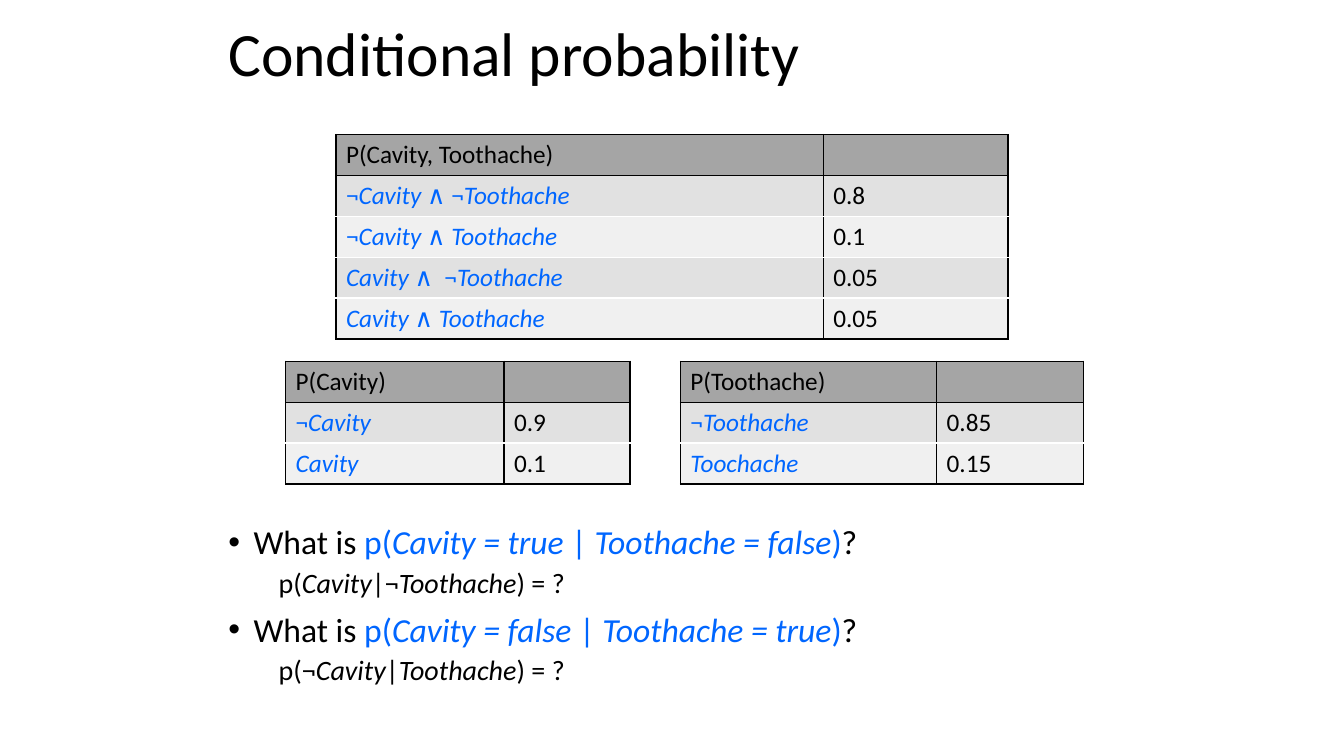
from lxml import etree
from pptx import Presentation
from pptx import util as u
from pptx.dml.color import RGBColor
from pptx.enum import text
from pptx.oxml import ns

PX = 9525  # EMU per px, on a slide of 1280 x 720 px


class Theme:
    font = "Calibri"
    ink, blue, white = "000000", "0066FF", "FFFFFF"
    header, bands = "A5A5A5", ("E1E1E1", "F0F0F0")
    title, question, answer, cell = 44, 24, 20, 18
    row_height = 39


def px(n):
    return u.Emu(n * PX)


def set_all(obj, values):
    for name, value in values.items():
        setattr(obj, name, value)


def add_runs(p, parts, size):
    """Write (text, colour) parts; asterisks enclose italics."""
    for markup, colour in parts:
        for i, piece in enumerate(markup.split("*")):
            if piece:
                r = p.add_run()
                r.text = piece
                set_all(r.font, {"name": Theme.font, "size": u.Pt(size),
                                 "italic": i % 2 == 1})
                r.font.color.rgb = RGBColor.from_string(colour)


def add_text(s, box, anchor):
    tf = s.shapes.add_textbox(*map(px, box)).text_frame
    set_all(tf, {"word_wrap": True, "vertical_anchor": anchor})
    return tf


def add_title(s, words):
    tf = add_text(s, (208, 8, 864, 91), text.MSO_ANCHOR.MIDDLE)
    p = tf.paragraphs[0]
    p.line_spacing = 0.9
    add_runs(p, [(words, Theme.ink)], Theme.title)


def add_line(tf, parts, size, before, margin, bullet=None):
    first = not tf.paragraphs[0].runs
    p = tf.paragraphs[0] if first else tf.add_paragraph()
    set_all(p, {"line_spacing": 0.9, "space_before": u.Pt(0 if first else before)})
    pPr = p._p.get_or_add_pPr()
    pPr.set("marL", str(px(margin)))
    pPr.set("indent", str(px(-24)))
    if bullet:
        etree.SubElement(pPr, ns.qn("a:buFont"), typeface="Arial")
        etree.SubElement(pPr, ns.qn("a:buChar"), char=bullet)
    else:
        etree.SubElement(pPr, ns.qn("a:buNone"))
    add_runs(p, parts, size)


def add_questions(s, questions):
    tf = add_text(s, (208, 496, 966, 202), text.MSO_ANCHOR.TOP)
    for query, answer in questions:
        parts = [("What is ", Theme.ink), (query, Theme.blue), ("?", Theme.ink)]
        add_line(tf, parts, Theme.question, 10, 24, "•")
        add_line(tf, [(answer, Theme.ink)], Theme.answer, 5, 72)


def set_borders(cell, top, bottom):
    tcPr = cell._tc.get_or_add_tcPr()
    sides = {"L": Theme.ink, "R": Theme.ink, "T": top, "B": bottom}
    for side, colour in sides.items():
        ln = etree.SubElement(tcPr, ns.qn(f"a:ln{side}"), w=str(u.Pt(1)))
        fill = etree.SubElement(ln, ns.qn("a:solidFill"))
        etree.SubElement(fill, ns.qn("a:srgbClr"), val=colour)


def add_probabilities(s, left, top, widths, heading, entries):
    rows = [(heading, "")] + entries
    sp = s.shapes.add_table(len(rows), 2, px(left), px(top), px(sum(widths)),
                            px(Theme.row_height * len(rows)))
    table = sp.table
    for column, width in zip(table.columns, widths):
        column.width = px(width)
    for i, row in enumerate(rows):
        table.rows[i].height = px(Theme.row_height)
        fill = Theme.bands[(i - 1) % 2] if i else Theme.header
        # White rules between entries, black around them and the header
        upper = Theme.white if i > 1 else Theme.ink
        lower = Theme.white if 0 < i < len(rows) - 1 else Theme.ink
        for j, words in enumerate(row):
            cell = table.cell(i, j)
            set_borders(cell, upper, lower)
            cell.fill.solid()
            cell.fill.fore_color.rgb = RGBColor.from_string(fill)
            colour = Theme.blue if i and j == 0 else Theme.ink
            add_runs(cell.text_frame.paragraphs[0], [(words, colour)], Theme.cell)


def main():
    prs = Presentation()
    set_all(prs, {"slide_width": px(1280), "slide_height": px(720)})
    s = prs.slides.add_slide(prs.slide_layouts[6])

    add_title(s, "Conditional probability")

    # Joint distribution
    add_probabilities(s, 320, 128, (464, 176), "P(Cavity, Toothache)", [
        ("¬*Cavity *∧ ¬*Toothache*", "0.8"),
        ("¬*Cavity *∧* Toothache*", "0.1"),
        ("*Cavity *∧  ¬*Toothache*", "0.05"),
        ("*Cavity *∧* Toothache*", "0.05"),
    ])

    # Marginal distributions
    add_probabilities(s, 272, 344, (208, 120), "P(Cavity)",
                      [("¬*Cavity*", "0.9"), ("*Cavity*", "0.1")])
    add_probabilities(s, 648, 344, (244, 140), "P(Toothache)",
                      [("¬*Toothache*", "0.85"), ("*Toochache*", "0.15")])

    # Questions
    add_questions(s, [
        ("p(*Cavity = true* | *Toothache = false*)", "p(*Cavity*|¬*Toothache*) = ?"),
        ("p(*Cavity = false* | *Toothache = true*)", "p(¬*Cavity*|*Toothache*) = ?"),
    ])

    prs.save("out.pptx")


if __name__ == "__main__":
    main()
